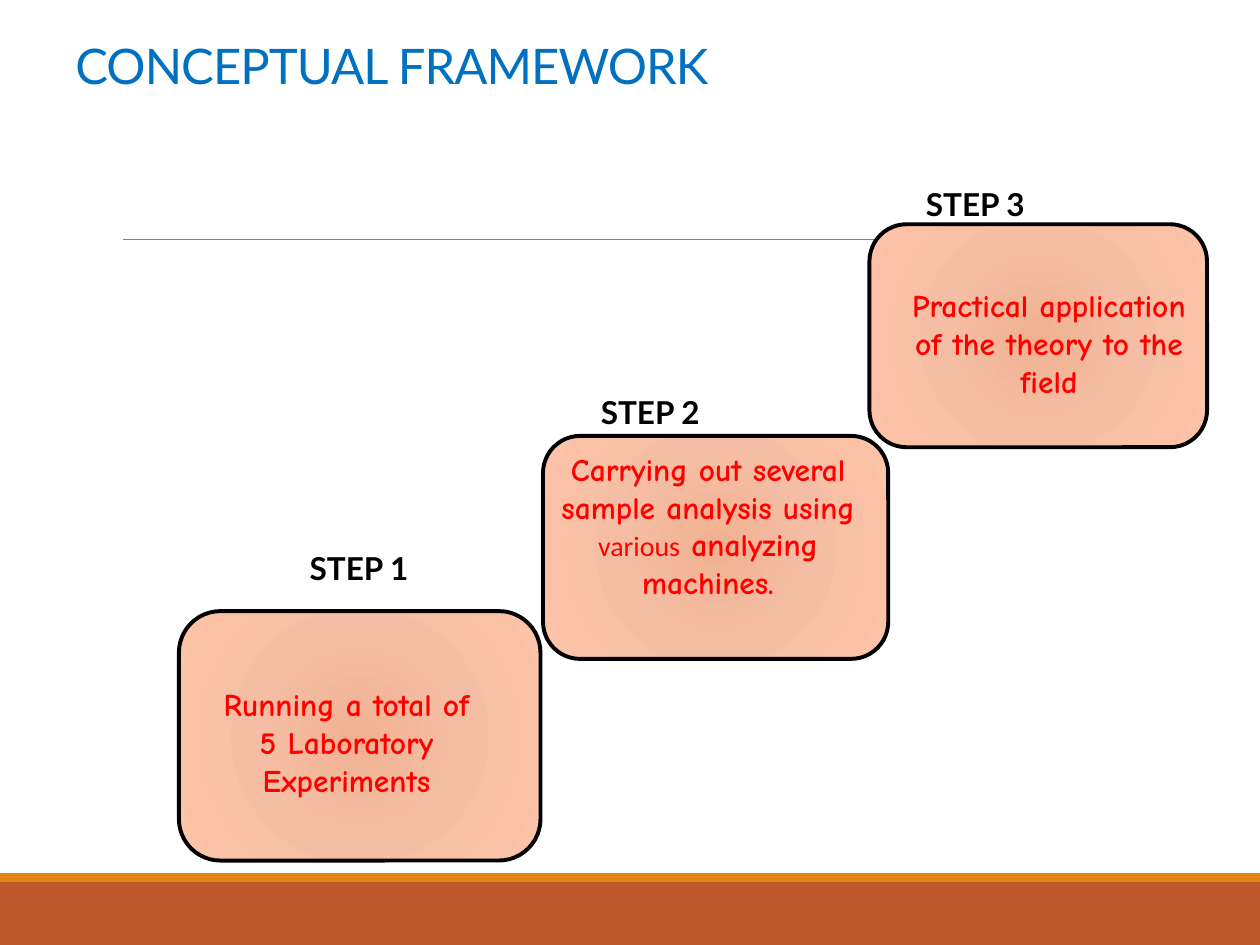
from lxml import etree
from pptx import Presentation
from pptx.dml.color import RGBColor
from pptx.enum.shapes import MSO_CONNECTOR as Line, MSO_SHAPE as Shape
from pptx.enum.text import MSO_ANCHOR as Anchor, PP_ALIGN as Align
from pptx.oxml import parse_xml
from pptx.oxml.ns import nsdecls, qn
from pptx.util import Inches, Pt

BLACK = RGBColor(0x00, 0x00, 0x00)
BLUE = RGBColor(0x00, 0x70, 0xC0)
RED = RGBColor(0xFF, 0x00, 0x00)
GRAY = RGBColor(0x80, 0x80, 0x80)
RUST = RGBColor(0xBD, 0x58, 0x2C)
ORANGE = RGBColor(0xE4, 0x83, 0x12)
GLOW = ((0, RGBColor(0xF0, 0xB1, 0x91)),
        (45, RGBColor(0xF5, 0xBE, 0xA4)),
        (100, RGBColor(0xFD, 0xC3, 0xA8)))

HEAD = ("Lato", 18, True, BLACK)
BODY = ("Comic Neue", 18, True, RED)
PLAIN = ("Calibri", 16, False, RED)

# Each step: card, label place, text place, text runs
STEPS = (
    ((1.42, 4.85, 2.87, 1.98), (2.36, 4.31, 1.53, 0.4), (1.61, 5.39, 2.28, 1.01),
     [("Running a total of 5 Laboratory Experiments", BODY)]),
    ((4.31, 3.46, 2.74, 1.77), (4.67, 3.07, 1.54, 0.4), (4.35, 3.52, 2.54, 1.62),
     [("Carrying out several sample analysis using ", BODY),
      ("various", PLAIN), (" analyzing machines.", BODY)]),
    ((6.9, 1.78, 2.68, 1.77), (7.25, 1.42, 1.66, 0.4), (7.07, 2.22, 2.51, 1.31),
     [("Practical application of the theory to the field", BODY)]),
)


def add_text(slide, place, runs, align=Align.LEFT):
    box = slide.shapes.add_textbox(*map(Inches, place))
    box.text_frame.word_wrap = True
    para = box.text_frame.paragraphs[0]
    para.alignment = align
    for text, (face, size, bold, color) in runs:
        run = para.add_run()
        run.text = text
        font = run.font
        font.name, font.size, font.bold = face, Pt(size), bold
        font.color.rgb = color
    return box


def add_title(slide, text):
    style = ("Lato", 28, False, BLUE)
    frame = add_text(slide, (0.5, 0.3, 9, 0.5), [(text, style)]).text_frame
    frame.vertical_anchor = Anchor.BOTTOM
    para = frame.paragraphs[0]
    para.line_spacing = 0.85
    para.runs[0].font._element.set("spc", "-50")


def add_band(slide, place, color):
    band = slide.shapes.add_shape(Shape.RECTANGLE, *map(Inches, place))
    band.shadow.inherit = False
    band.fill.solid()
    band.fill.fore_color.rgb = color
    band.line.fill.background()


def add_rule(slide, left, right, top):
    ends = map(Inches, (left, top, right, top))
    rule = slide.shapes.add_connector(Line.STRAIGHT, *ends)
    rule.line.color.rgb = GRAY
    rule.line.width = Pt(0.5)
    etree.SubElement(rule._element.spPr, qn("a:effectLst"))


def add_card(slide, place):
    """Add a rounded box whose fill spreads from its centre."""
    card = slide.shapes.add_shape(Shape.ROUNDED_RECTANGLE, *map(Inches, place))
    card.shadow.inherit = False
    card.line.color.rgb = BLACK
    card.line.width = Pt(2.25)
    stops = "".join(
        f'<a:gs pos="{pos * 1000}"><a:srgbClr val="{color}"/></a:gs>'
        for pos, color in GLOW)
    fill = parse_xml(
        f'<a:gradFill {nsdecls("a")} rotWithShape="1"><a:gsLst>{stops}</a:gsLst>'
        '<a:path path="circle"><a:fillToRect l="50000" t="50000" r="50000" '
        'b="50000"/></a:path></a:gradFill>')
    card._element.spPr.find(qn("a:prstGeom")).addnext(fill)


def main():
    deck = Presentation()
    deck.slide_width, deck.slide_height = Inches(10), Inches(7.5)
    slide = deck.slides.add_slide(deck.slide_layouts[6])
    add_band(slide, (0, 7, 10, 0.5), RUST)
    add_band(slide, (0, 6.93, 10, 0.07), ORANGE)
    add_rule(slide, 0.98, 9.15, 1.9)
    add_title(slide, "CONCEPTUAL FRAMEWORK")
    for num, (card, label, place, runs) in enumerate(STEPS, 1):
        add_card(slide, card)
        add_text(slide, label, [(f"STEP {num}", HEAD)])
        add_text(slide, place, runs, Align.CENTER)
    deck.save("out.pptx")


if __name__ == "__main__":
    main()
